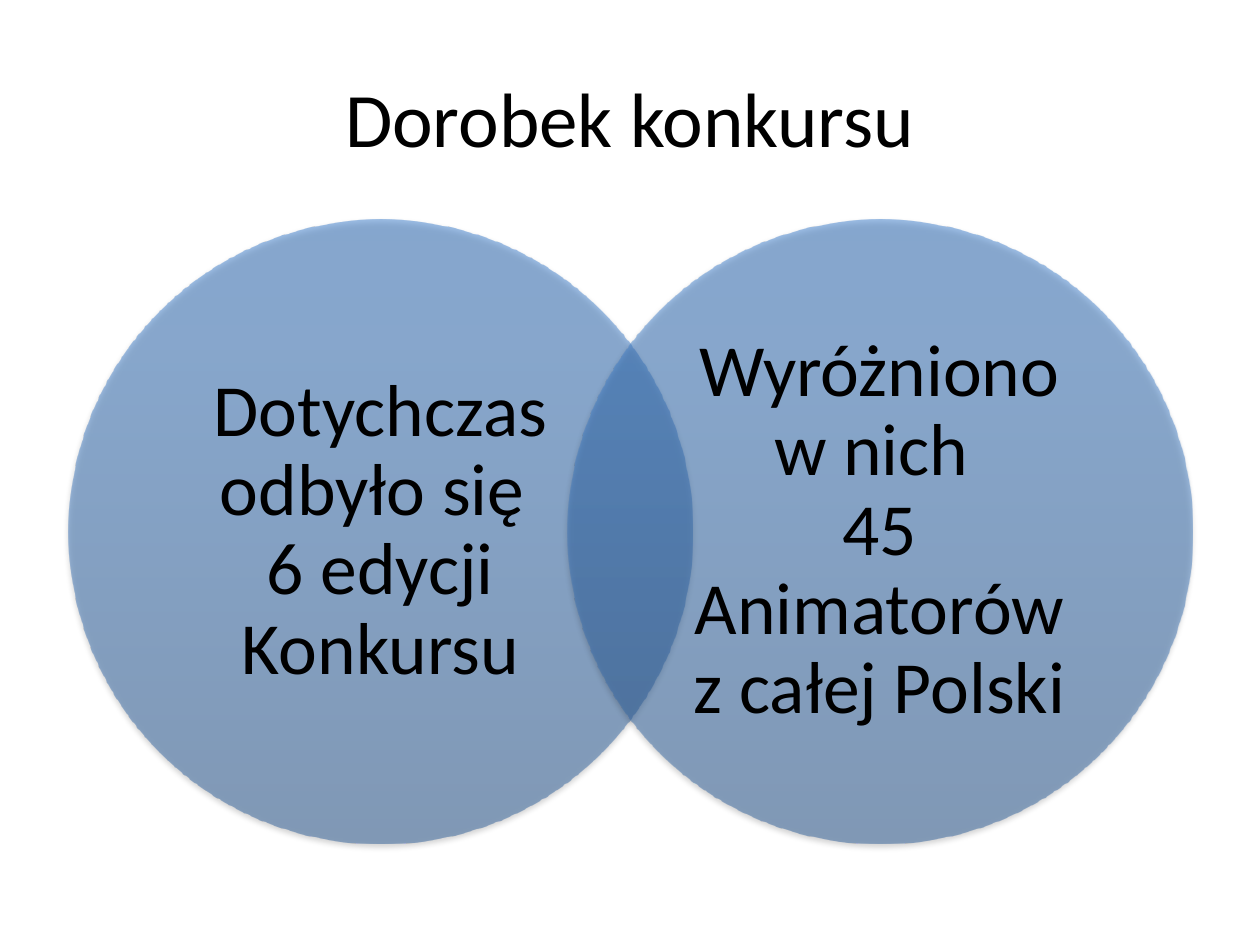
"""Build a slide with two overlapping circles summing up a contest."""
from dataclasses import dataclass

from lxml import etree
from pptx import Presentation
from pptx import util as u
from pptx.dml.color import RGBColor
from pptx.enum import shapes, text
from pptx.oxml import ns

TITLE = "Dorobek konkursu"
ACHIEVEMENTS = [
    "Dotychczas odbyło się \v6 edycji Konkursu",
    "Wyróżniono w nich \v45 Animatorów z całej Polski",
]


@dataclass(frozen=True)
class Theme:
    font: str = "Calibri"
    ink: str = "000000"
    title_size: int = 44
    body_size: int = 42
    gradient: tuple = ((0, "2F5F99"), (80, "3D7CC7"), (100, "3A7CCB"))
    circle_opacity: int = 50
    shadow_opacity: int = 35


THEME = Theme()
SLIDE_W, SLIDE_H = 1260, 945
TITLE_BOX = (63, 38, 1134, 158)
CIRCLE_LEFT, CIRCLE_TOP, DIAMETER, STEP = 69, 220, 624, 499
CAPTION_SIDE = 441
INSET_X, INSET_Y = 34, 8


def px(length):
    return u.Emu(round(length * 914400 / 126))


def add_color(parent, color, opacity):
    swatch = etree.SubElement(parent, ns.qn("a:srgbClr"), val=color)
    etree.SubElement(swatch, ns.qn("a:alpha"), val=str(opacity * 1000))


def add_text(slide, words, box, size, inset=(0, 0), line_spacing=1.0):
    frame = slide.shapes.add_textbox(*map(px, box)).text_frame
    frame.word_wrap = True
    frame.vertical_anchor = text.MSO_ANCHOR.MIDDLE
    frame.margin_left = frame.margin_right = px(inset[0])
    frame.margin_top = frame.margin_bottom = px(inset[1])
    paragraph = frame.paragraphs[0]
    paragraph.text = words
    paragraph.alignment = text.PP_ALIGN.CENTER
    paragraph.line_spacing = line_spacing
    for run in paragraph.runs:
        run.font.name = THEME.font
        run.font.size = u.Pt(size)
        run.font.color.rgb = RGBColor.from_string(THEME.ink)


def add_circle(slide, left):
    circle = slide.shapes.add_shape(
        shapes.MSO_SHAPE.OVAL, *map(px, (left, CIRCLE_TOP, DIAMETER, DIAMETER)))
    circle.line.fill.background()
    circle.shadow.inherit = False
    properties = circle.element.spPr

    gradient = etree.Element(ns.qn("a:gradFill"), rotWithShape="1")
    stops = etree.SubElement(gradient, ns.qn("a:gsLst"))
    for position, color in THEME.gradient:
        stop = etree.SubElement(stops, ns.qn("a:gs"), pos=str(position * 1000))
        add_color(stop, color, THEME.circle_opacity)
    etree.SubElement(gradient, ns.qn("a:lin"), ang=str(270 * 60000), scaled="0")
    properties.find(ns.qn("a:prstGeom")).addnext(gradient)

    shadow = etree.SubElement(
        properties.find(ns.qn("a:effectLst")), ns.qn("a:outerShdw"),
        blurRad=str(u.Pt(3.1)), dist=str(u.Pt(1.8)), dir=str(90 * 60000), rotWithShape="0")
    add_color(shadow, THEME.ink, THEME.shadow_opacity)


def main():
    deck = Presentation()
    deck.slide_width, deck.slide_height = px(SLIDE_W), px(SLIDE_H)
    slide = deck.slides.add_slide(deck.slide_layouts[6])
    add_text(slide, TITLE, TITLE_BOX, THEME.title_size)
    margin = (DIAMETER - CAPTION_SIDE) // 2
    for index, achievement in enumerate(ACHIEVEMENTS):
        left = CIRCLE_LEFT + index * STEP
        add_circle(slide, left)
        caption_box = (left + margin, CIRCLE_TOP + margin, CAPTION_SIDE, CAPTION_SIDE)
        add_text(slide, achievement, caption_box, THEME.body_size, (INSET_X, INSET_Y), 0.9)
    deck.save("out.pptx")


if __name__ == "__main__":
    main()
